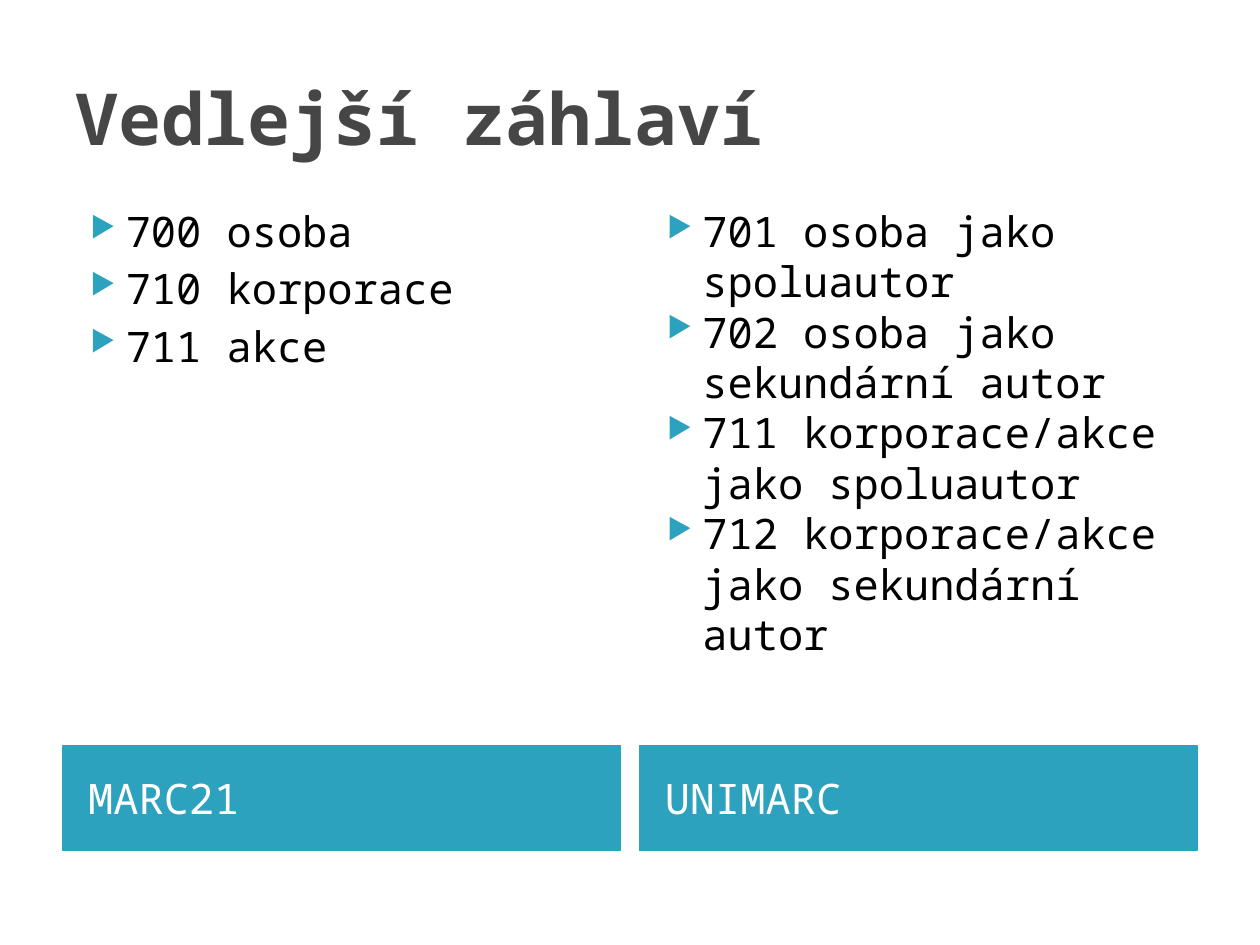
"""Build the slide comparing added entry headings in MARC21 and UNIMARC."""
import pptx
import pptx.dml.color
import pptx.enum.shapes
import pptx.enum.text
import pptx.oxml.ns
import pptx.util
from lxml import etree

Pt = pptx.util.Pt
RGBColor = pptx.dml.color.RGBColor
MIDDLE = pptx.enum.text.MSO_ANCHOR.MIDDLE

HEADING = "Vedlejší záhlaví"
FORMATS = [
    {"name": "MARC21", "gap": 4,
     "fields": ["700 osoba", "710 korporace", "711 akce"]},
    {"name": "UNIMARC", "gap": 0,
     "fields": ["701 osoba jako spoluautor",
                "702 osoba jako sekundární autor",
                "711 korporace/akce jako spoluautor",
                "712 korporace/akce jako sekundární autor"]},
]

FONT = "Noto Sans Mono"
TEAL = RGBColor(0x2D, 0xA2, 0xBF)
GRAY = RGBColor(0x46, 0x46, 0x46)
BLACK = RGBColor(0, 0, 0)
WHITE = RGBColor(0xFF, 0xFF, 0xFF)

SLIDE_WIDTH, SLIDE_HEIGHT = 720, 540
MARGIN = 36
COLUMN_WIDTH = 318.5
FIELDS_TOP, FIELDS_HEIGHT = 113.75, 310
BAND_TOP, BAND_HEIGHT = 426, 60
BULLET_INDENT, BULLET_HANG = 28.8, 20.2


def style(paragraph, size, color, bold=False):
    paragraph.alignment = pptx.enum.text.PP_ALIGN.LEFT
    for run in paragraph.runs:
        run.font.name = FONT
        run.font.size = Pt(size)
        run.font.bold = bold
        run.font.color.rgb = color


def add_bullet(paragraph):
    properties = paragraph._p.get_or_add_pPr()
    properties.set("marL", str(Pt(BULLET_INDENT)))
    properties.set("indent", str(-Pt(BULLET_HANG)))
    qn = pptx.oxml.ns.qn
    color = etree.SubElement(properties, qn("a:buClr"))
    etree.SubElement(color, qn("a:srgbClr"), val=str(TEAL))
    etree.SubElement(properties, qn("a:buSzPct"), val="68000")
    etree.SubElement(properties, qn("a:buChar"), char="▶")


def add_text(slide, left, top, width, height):
    frame = slide.shapes.add_textbox(Pt(left), Pt(top), Pt(width), Pt(height)).text_frame
    frame.word_wrap = True
    return frame


def add_fields(slide, left, fields, gap):
    frame = add_text(slide, left, FIELDS_TOP, COLUMN_WIDTH, FIELDS_HEIGHT)
    frame.text = "\n".join(fields)
    for index, paragraph in enumerate(frame.paragraphs):
        add_bullet(paragraph)
        paragraph.space_before = Pt(gap if index else 0)
        style(paragraph, 24, BLACK)


def add_band(slide, left, name):
    band = slide.shapes.add_shape(
        pptx.enum.shapes.MSO_SHAPE.RECTANGLE,
        Pt(left), Pt(BAND_TOP), Pt(COLUMN_WIDTH), Pt(BAND_HEIGHT))
    band.shadow.inherit = False
    band.fill.solid()
    band.fill.fore_color.rgb = TEAL
    band.line.color.rgb = TEAL
    band.line.width = Pt(0.75)
    frame = band.text_frame
    frame.margin_left = Pt(14.4)
    frame.vertical_anchor = MIDDLE
    frame.text = name
    style(frame.paragraphs[0], 24, WHITE)


def main():
    deck = pptx.Presentation()
    deck.slide_width, deck.slide_height = Pt(SLIDE_WIDTH), Pt(SLIDE_HEIGHT)
    slide = deck.slides.add_slide(deck.slide_layouts[6])

    heading = add_text(slide, MARGIN, 21.6, SLIDE_WIDTH - 2 * MARGIN, 90)
    heading.vertical_anchor = MIDDLE
    heading.text = HEADING
    style(heading.paragraphs[0], 41, GRAY, bold=True)

    column_step = SLIDE_WIDTH - 2 * MARGIN - COLUMN_WIDTH
    for column, entry in enumerate(FORMATS):
        left = MARGIN + column * column_step
        add_band(slide, left, entry["name"])
        add_fields(slide, left, entry["fields"], entry["gap"])

    deck.save("out.pptx")


if __name__ == "__main__":
    main()
